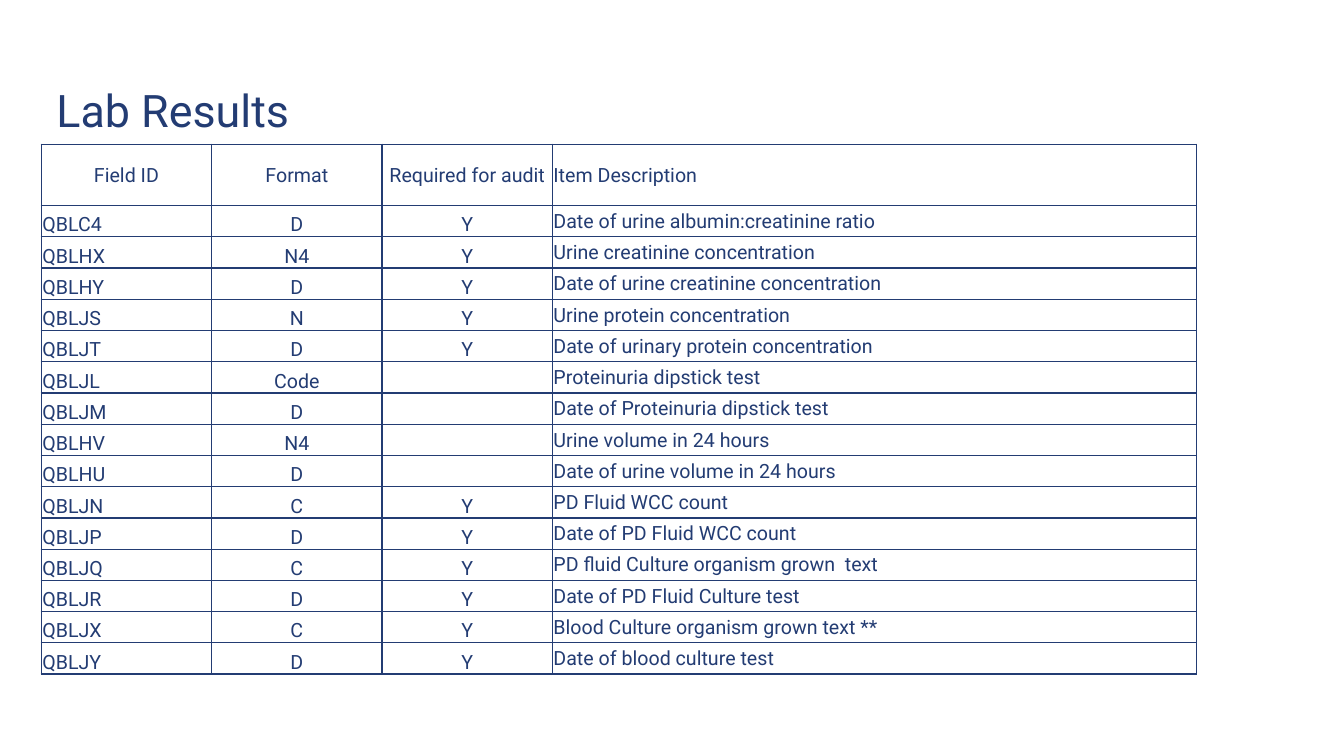
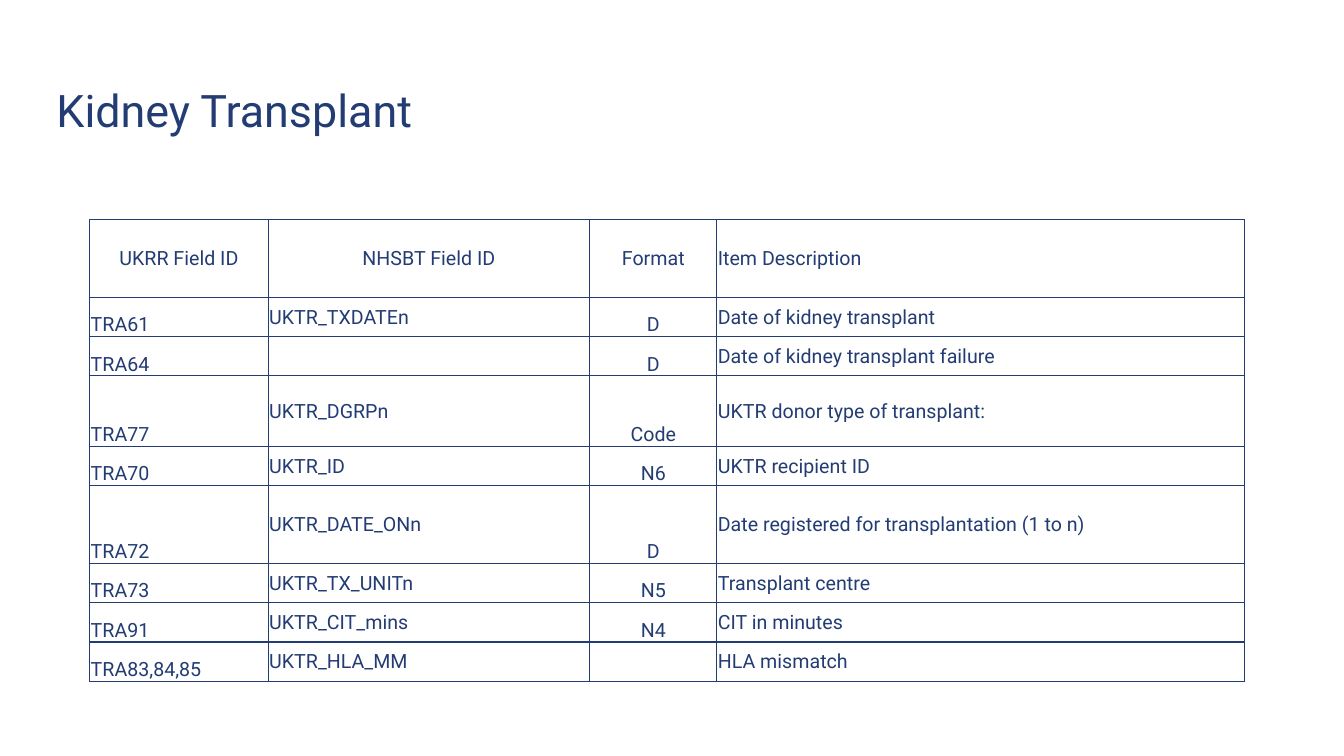
from dataclasses import dataclass

from lxml import etree
from pptx import Presentation
from pptx.dml.color import RGBColor
from pptx.enum.text import MSO_ANCHOR, PP_ALIGN
from pptx.oxml.ns import qn
from pptx.util import Inches, Pt

LEFT, CENTER = PP_ALIGN.LEFT, PP_ALIGN.CENTER
MIDDLE, BOTTOM = MSO_ANCHOR.MIDDLE, MSO_ANCHOR.BOTTOM
ID, CODE, NOTE = (LEFT, BOTTOM), (CENTER, BOTTOM), (LEFT, MIDDLE)
HEAD = (CENTER, MIDDLE)
TITLE_ONLY = 5


@dataclass(frozen=True)
class Theme:
    ink: str = "233C73"
    face: str = "Roboto"
    title: int = 32
    body: int = 14
    line: int = 1
    inset: float = 0.01


THEME = Theme()
TITLE_BOX = (0.56, 0.4, 10.43, 1.38)

LABS = [
    ("Field ID", "Format", "Required for audit", "Item Description"),
    ("QBLC4", "D", "Y", "Date of urine albumin:creatinine ratio"),
    ("QBLHX", "N4", "Y", "Urine creatinine concentration"),
    ("QBLHY", "D", "Y", "Date of urine creatinine concentration"),
    ("QBLJS", "N", "Y", "Urine protein concentration"),
    ("QBLJT", "D", "Y", "Date of urinary protein concentration"),
    ("QBLJL", "Code", "", "Proteinuria dipstick test"),
    ("QBLJM", "D", "", "Date of Proteinuria dipstick test"),
    ("QBLHV", "N4", "", "Urine volume in 24 hours"),
    ("QBLHU", "D", "", "Date of urine volume in 24 hours"),
    ("QBLJN", "C", "Y", "PD Fluid WCC count"),
    ("QBLJP", "D", "Y", "Date of PD Fluid WCC count"),
    ("QBLJQ", "C", "Y", "PD fluid Culture organism grown  text"),
    ("QBLJR", "D", "Y", "Date of PD Fluid Culture test"),
    ("QBLJX", "C", "Y", "Blood Culture organism grown text **"),
    ("QBLJY", "D", "Y", "Date of blood culture test"),
]

GRAFTS = [
    ("UKRR Field ID", "NHSBT Field ID", "Format", "Item Description"),
    ("TRA61", "UKTR_TXDATEn", "D", "Date of kidney transplant"),
    ("TRA64", "", "D", "Date of kidney transplant failure"),
    ("TRA77", "UKTR_DGRPn", "Code", "UKTR donor type of transplant:"),
    ("TRA70", "UKTR_ID", "N6", "UKTR recipient ID"),
    ("TRA72", "UKTR_DATE_ONn", "D", "Date registered for transplantation (1 to n)"),
    ("TRA73", "UKTR_TX_UNITn", "N5", "Transplant centre"),
    ("TRA91", "UKTR_CIT_mins", "N4", "CIT in minutes"),
    ("TRA83,84,85", "UKTR_HLA_MM", "", "HLA mismatch"),
]


def style(para, size):
    for run in para.runs:
        run.font.name = THEME.face
        run.font.size = Pt(size)
        run.font.color.rgb = RGBColor.from_string(THEME.ink)


def add_title(slide, text):
    title = slide.shapes.title
    title.left, title.top, title.width, title.height = map(Inches, TITLE_BOX)
    frame = title.text_frame
    frame.text = text
    frame.word_wrap = True
    frame.vertical_anchor = MIDDLE
    frame.margin_left = frame.margin_right = 0
    frame.margin_top = frame.margin_bottom = 0
    para = frame.paragraphs[0]
    para.alignment = LEFT
    style(para, THEME.title)


def add_edges(cell):
    props = cell._tc.get_or_add_tcPr()
    for side in ("lnL", "lnR", "lnT", "lnB"):
        line = etree.SubElement(props, qn(f"a:{side}"), w=str(Pt(THEME.line)))
        fill = etree.SubElement(line, qn("a:solidFill"))
        etree.SubElement(fill, qn("a:srgbClr"), val=THEME.ink)


def fill_cell(cell, text, place):
    cell.text_frame.text = text
    para = cell.text_frame.paragraphs[0]
    para.alignment, cell.vertical_anchor = place
    cell.margin_left = cell.margin_right = Inches(THEME.inset)
    cell.margin_top, cell.margin_bottom = Inches(THEME.inset), 0
    style(para, THEME.body)
    if not text:
        # An empty cell would otherwise keep 18 pt and stretch its row.
        etree.SubElement(para._p, qn("a:endParaRPr"), sz=str(THEME.body * 100))
    add_edges(cell)
    cell.fill.background()


def add_grid(slide, left, top, rows, widths, heights, places):
    """Draw rows, the first being the header; places aligns each body column."""
    frame = slide.shapes.add_table(
        len(rows), len(widths), Inches(left), Inches(top),
        Inches(sum(widths)), Inches(sum(heights)))
    table = frame.table
    table.first_row = table.horz_banding = False
    for col, width in zip(table.columns, widths):
        col.width = Inches(width)
    for row, height in zip(table.rows, heights):
        row.height = Inches(height)
    heads = [HEAD] * (len(widths) - 1) + [NOTE]
    for r, texts in enumerate(rows):
        for c, text in enumerate(texts):
            fill_cell(table.cell(r, c), text, places[c] if r else heads[c])


def add_page(deck, title, *grid):
    slide = deck.slides.add_slide(deck.slide_layouts[TITLE_ONLY])
    add_title(slide, title)
    add_grid(slide, *grid)


def main():
    deck = Presentation()
    deck.slide_width, deck.slide_height = Inches(13.33), Inches(7.5)
    add_page(deck, "Lab Results", 0.41, 1.43, LABS,
             [1.69] * 3 + [6.39], [0.61] + [0.31] * 15,
             (ID, CODE, CODE, NOTE))
    add_page(deck, "Kidney Transplant", 0.89, 2.18, GRAFTS,
             [1.77, 3.19, 1.26, 5.23],
             [0.77, 0.39, 0.39, 0.7, 0.39, 0.77] + [0.39] * 3,
             (ID, NOTE, CODE, NOTE))
    deck.save("out.pptx")


if __name__ == "__main__":
    main()
